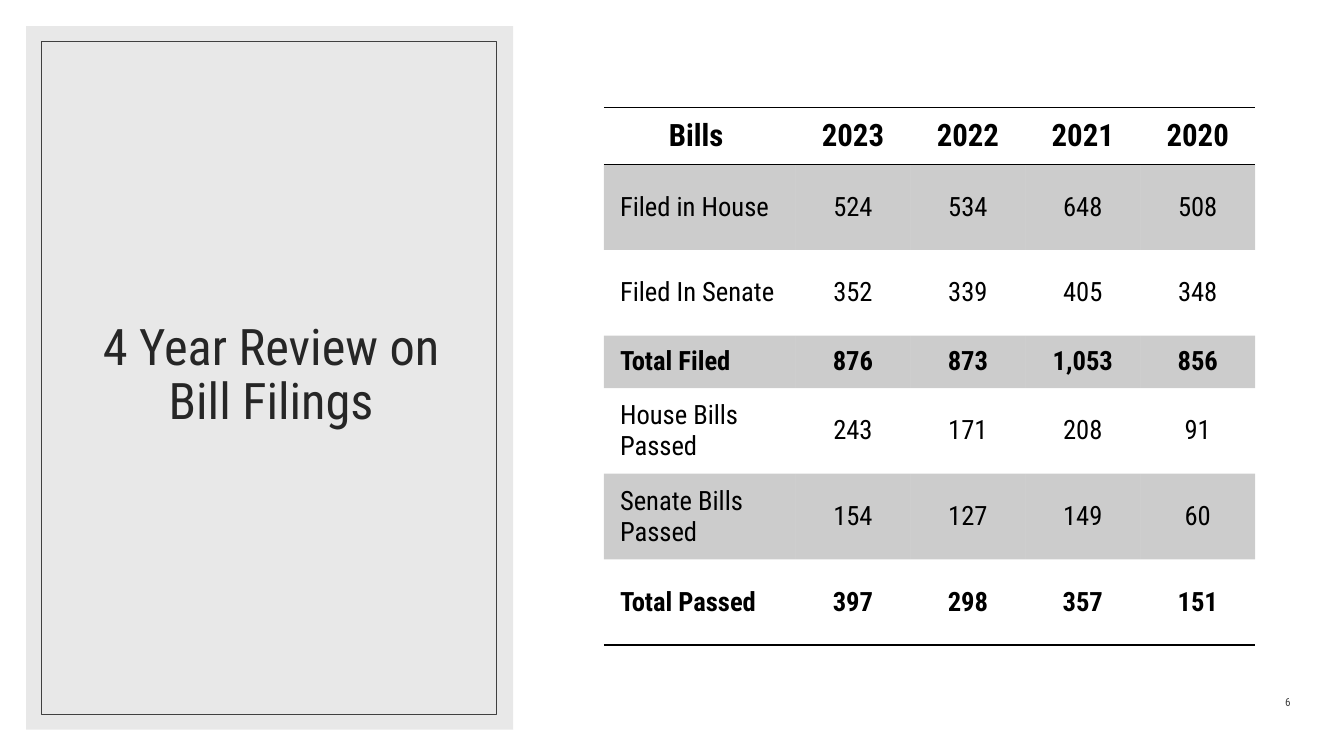
import dataclasses
import typing

import pptx
import pptx.dml.color
import pptx.enum.shapes
import pptx.enum.text
import pptx.oxml
import pptx.oxml.ns
import pptx.util

Inches = pptx.util.Inches
Pt = pptx.util.Pt
ALIGN = pptx.enum.text.PP_ALIGN
ANCHOR = pptx.enum.text.MSO_ANCHOR

FONT = "Roboto Condensed"
COLORS = {
    "white": "FFFFFF",
    "panel": "D9D9D9",
    "title": "262626",
    "frame": "404040",
    "ink": "000000",
}
NO_GRID_STYLE = "{2D5ABB26-0587-4C30-8999-92F81FD0307C}"


@dataclasses.dataclass
class Panel:
    left: float
    top: float
    width: float
    height: float
    fill: typing.Optional[str] = None
    opacity: int = 100
    line: typing.Optional[str] = None


@dataclasses.dataclass
class BillRow:
    label: str
    values: tuple[str, ...]
    height: float = 0.85
    size: int = 19
    bold: bool = False
    shaded: bool = False
    label_align: ALIGN = ALIGN.LEFT
    borders: tuple[str, ...] = ()


BACKDROPS = [
    Panel(0, 0, 13.33, 7.5, fill="white"),
    Panel(0.26, 0.26, 4.83, 6.98, fill="panel", opacity=60),
]
TITLE_FRAME = Panel(0.41, 0.41, 4.51, 6.68, line="frame")

COLUMN_WIDTHS = (1.9, 1.14, 1.14, 1.14, 1.14)
BILL_ROWS = [
    BillRow("Bills ", ("2023", "2022", "2021", "2020"), height=0.56, size=22, bold=True,
            label_align=ALIGN.CENTER, borders=("lnT", "lnB")),
    BillRow("Filed in House", ("524", "534", "648", "508"), shaded=True),
    BillRow("Filed In Senate", ("352", "339", "405", "348")),
    BillRow("Total Filed", ("876", "873", "1,053", "856"), height=0.52, bold=True, shaded=True),
    BillRow("House Bills Passed", ("243", "171", "208", "91")),
    BillRow("Senate Bills Passed", ("154", "127", "149", "60"), shaded=True),
    BillRow("Total Passed", ("397", "298", "357", "151"), bold=True, borders=("lnB",)),
]


def rgb(name: str) -> pptx.dml.color.RGBColor:
    return pptx.dml.color.RGBColor.from_string(COLORS[name])


def set_values(target: typing.Any, values: dict[str, typing.Any]) -> None:
    for name, value in values.items():
        setattr(target, name, value)


def fill_color(fill: typing.Any, owner: typing.Any, color: str, opacity: int = 100) -> None:
    fill.solid()
    fill.fore_color.rgb = rgb(color)
    if opacity < 100:
        color_element = owner.find(pptx.oxml.ns.qn("a:solidFill"))[0]
        alpha = pptx.oxml.parse_xml(
            f'<a:alpha {pptx.oxml.ns.nsdecls("a")} val="{opacity * 1000}"/>')
        color_element.append(alpha)


def write_text(frame: typing.Any, text: str, size: int, color: str, align: ALIGN,
               bold: bool = False, **spacing: typing.Any) -> None:
    para = frame.paragraphs[0]
    set_values(para, {"alignment": align, **spacing})
    span = para.add_run()
    span.text = text
    set_values(span.font, {"name": FONT, "size": Pt(size), "bold": bold})
    span.font.color.rgb = rgb(color)


def draw_panel(page: typing.Any, panel: Panel) -> None:
    box = page.shapes.add_shape(
        pptx.enum.shapes.MSO_SHAPE.RECTANGLE,
        *map(Inches, (panel.left, panel.top, panel.width, panel.height)))
    box.shadow.inherit = False
    if panel.fill:
        fill_color(box.fill, box.element.spPr, panel.fill, panel.opacity)
    else:
        box.fill.background()
    if panel.line:
        box.line.color.rgb = rgb(panel.line)
        box.line.width = Pt(0.5)
    else:
        box.line.fill.background()


def draw_title(page: typing.Any) -> None:
    title = page.shapes.title
    set_values(title, {"left": Inches(0.63), "top": Inches(0.61),
                       "width": Inches(4.12), "height": Inches(6.24)})
    set_values(title.text_frame, {"word_wrap": True, "vertical_anchor": ANCHOR.MIDDLE,
                                  "auto_size": pptx.enum.text.MSO_AUTO_SIZE.NONE})
    write_text(title.text_frame, "4 Year Review on Bill Filings", 36, "title",
               ALIGN.CENTER, line_spacing=0.9)
    # Bring the title in front of the panel
    title.element.getparent().append(title.element)


def draw_page_number(page: typing.Any) -> None:
    box = page.shapes.add_textbox(Inches(12), Inches(6.78), Inches(0.9), Inches(0.3))
    set_values(box.text_frame, {"word_wrap": True, "vertical_anchor": ANCHOR.BOTTOM})
    write_text(box.text_frame, "6", 8, "frame", ALIGN.RIGHT, space_after=Pt(6))


def draw_cell(cell: typing.Any, text: str, align: ALIGN, row: BillRow) -> None:
    set_values(cell, {"vertical_anchor": ANCHOR.MIDDLE,
                      "margin_left": Inches(0.16), "margin_right": Inches(0.16),
                      "margin_top": Inches(0.08), "margin_bottom": Inches(0.08)})
    write_text(cell.text_frame, text, row.size, "ink", align, row.bold)
    properties = cell._tc.get_or_add_tcPr()
    for side in row.borders:
        properties.append(pptx.oxml.parse_xml(
            f'<a:{side} {pptx.oxml.ns.nsdecls("a")} w="{Pt(1)}"><a:solidFill>'
            f'<a:srgbClr val="{COLORS["ink"]}"/></a:solidFill></a:{side}>'))
    if row.shaded:
        fill_color(cell.fill, properties, "ink", opacity=20)
    else:
        cell.fill.background()


def draw_bill_table(page: typing.Any) -> None:
    holder = page.shapes.add_table(
        len(BILL_ROWS), len(COLUMN_WIDTHS), Inches(5.99), Inches(1.07),
        Inches(sum(COLUMN_WIDTHS)), Inches(sum(row.height for row in BILL_ROWS)))
    table = holder.table
    set_values(table, {"first_row": False, "horz_banding": False})
    table._tbl.tblPr.find(pptx.oxml.ns.qn("a:tableStyleId")).text = NO_GRID_STYLE
    for column, width in zip(table.columns, COLUMN_WIDTHS):
        column.width = Inches(width)
    for row_index, row in enumerate(BILL_ROWS):
        table.rows[row_index].height = Inches(row.height)
        for column_index, text in enumerate((row.label, *row.values)):
            align = ALIGN.CENTER if column_index else row.label_align
            draw_cell(table.cell(row_index, column_index), text, align, row)


def main() -> None:
    deck = pptx.Presentation()
    set_values(deck, {"slide_width": Inches(13.33), "slide_height": Inches(7.5)})
    page = deck.slides.add_slide(deck.slide_layouts.get_by_name("Title Only"))

    # Left side: panel, title and thin frame
    for panel in BACKDROPS:
        draw_panel(page, panel)
    draw_title(page)
    draw_panel(page, TITLE_FRAME)

    # Right side: page number and bill counts
    draw_page_number(page)
    draw_bill_table(page)

    deck.save("out.pptx")


if __name__ == "__main__":
    main()
